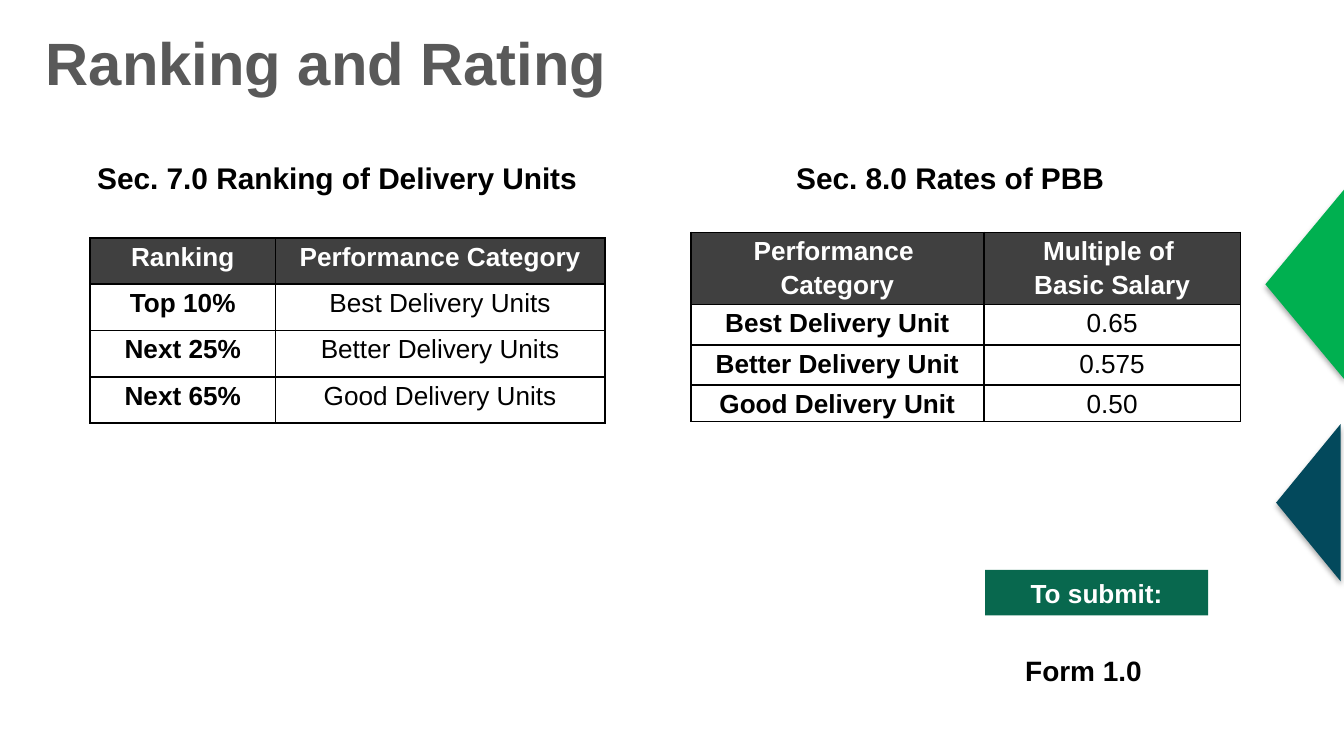
from lxml.etree import SubElement
from pptx import Presentation
from pptx.dml.color import RGBColor
from pptx.enum.shapes import MSO_SHAPE
from pptx.enum.text import MSO_ANCHOR, PP_ALIGN
from pptx.oxml import parse_xml
from pptx.oxml.ns import nsdecls, qn
from pptx.util import Inches, Pt

THEME = {
    "font": "Arial",
    "black": "000000", "white": "FFFFFF", "gray": "595959", "head": "404040",
    "green": "00B050", "navy": "03495C", "label": "08684E",
    "title": 32, "section": 16, "form": 15, "cell": 14,
}

TITLE = "Ranking and Rating"
SECTIONS = [
    {
        "name": "Sec. 7.0 Ranking of Delivery Units", "name_at": (0.26, 1.14),
        "at": (0.67, 1.77), "cols": [1.38, 2.45], "heights": [1.38 / 4] * 4,
        "rows": [
            (["Ranking"], ["Performance Category"]),
            (["Top 10%"], ["Best Delivery Units"]),
            (["Next 25%"], ["Better Delivery Units"]),
            (["Next 65%"], ["Good Delivery Units"]),
        ],
    },
    {
        "name": "Sec. 8.0 Rates of PBB", "name_at": (4.82, 1.14),
        "at": (5.14, 1.73), "cols": [2.18, 1.91], "heights": [0.53, 0.3, 0.3, 0.27],
        "rows": [
            (["Performance ", "Category"], ["Multiple of ", "Basic Salary"]),
            (["Best Delivery Unit"], ["0.65"]),
            (["Better Delivery Unit"], ["0.575"]),
            (["Good Delivery Unit"], ["0.50"]),
        ],
    },
]
ARROWS = [("green", 9, 1.82, 1.42, 0.59), ("navy", 9.15, 3.5, 1.17, 0.48)]
SUBMIT = ("To submit:", 7.33, 4.24, 1.66, 0.34)
FORM = ("Form 1.0", 7.53, 4.81, 1.8, 0.35)


def color(name):
    return RGBColor.from_string(THEME[name])


def write(frame, lines, size, ink, bold=True, align=PP_ALIGN.CENTER, space=None):
    frame.word_wrap = True
    for i, line in enumerate(lines):
        para = frame.add_paragraph() if i else frame.paragraphs[0]
        para.alignment = align
        para.line_spacing = space
        run = para.add_run()
        run.text = line
        font = run.font
        font.name, font.size, font.bold = THEME["font"], Pt(THEME[size]), bold
        font.color.rgb = color(ink)


def add_text(slide, text, box, size, align):
    frame = slide.shapes.add_textbox(*map(Inches, box)).text_frame
    write(frame, [text], size, "black", align=align)


def add_block(slide, kind, box, fill):
    shape = slide.shapes.add_shape(kind, *map(Inches, box))
    shape.shadow.inherit = False
    shape.fill.solid()
    shape.fill.fore_color.rgb = color(fill)
    shape.line.fill.background()
    return shape


def add_shadow(shape):
    effects = shape._element.spPr.find(qn("a:effectLst"))
    effects.append(parse_xml(
        f'<a:outerShdw {nsdecls("a")} blurRad="{Pt(3.1)}" dist="{Pt(1.8)}" '
        'dir="5400000" rotWithShape="0"><a:srgbClr val="000000">'
        '<a:alpha val="35000"/></a:srgbClr></a:outerShdw>'))


def add_border(cell):
    props = cell._tc.get_or_add_tcPr()
    for i, side in enumerate(("lnL", "lnR", "lnT", "lnB")):
        line = parse_xml(f'<a:{side} {nsdecls("a")} w="{Pt(1)}"/>')
        fill = SubElement(line, qn("a:solidFill"))
        SubElement(fill, qn("a:srgbClr"), val=THEME["black"])
        props.insert(i, line)


def add_grid(slide, part):
    cols, heights = part["cols"], part["heights"]
    box = (*part["at"], sum(cols), sum(heights))
    table = slide.shapes.add_table(
        len(heights), len(cols), *map(Inches, box)).table
    table.first_row = table.horz_banding = False
    for col, width in zip(table.columns, cols):
        col.width = Inches(width)
    for r, row in enumerate(part["rows"]):
        table.rows[r].height = Inches(heights[r])
        for c, lines in enumerate(row):
            cell = table.cell(r, c)
            cell.margin_left = cell.margin_right = Inches(0.07)
            cell.margin_top = cell.margin_bottom = 0
            head = r == 0
            if head:
                cell.fill.solid()
                cell.fill.fore_color.rgb = color("head")
            else:
                cell.fill.background()
            add_border(cell)
            write(cell.text_frame, lines, "cell", "white" if head else "black",
                  bold=head or c == 0, space=1.15)


def main():
    deck = Presentation()
    deck.slide_width = Inches(10)
    deck.slide_height = deck.slide_width * 9 // 16
    slide = deck.slides.add_slide(deck.slide_layouts[5])

    title = slide.shapes.title
    title.left, title.top = Inches(0.24), Inches(0.14)
    title.width, title.height = Inches(4.5), Inches(0.64)
    title.text_frame.vertical_anchor = MSO_ANCHOR.TOP
    write(title.text_frame, [TITLE], "title", "gray", align=PP_ALIGN.LEFT)

    for part in SECTIONS:
        add_text(slide, part["name"], (*part["name_at"], 4.5, 0.37),
                 "section", PP_ALIGN.CENTER)
        add_grid(slide, part)

    for fill, *box in ARROWS:
        arrow = add_block(slide, MSO_SHAPE.ISOSCELES_TRIANGLE, box, fill)
        arrow.rotation = 270
        add_shadow(arrow)

    text, *box = SUBMIT
    label = add_block(slide, MSO_SHAPE.RECTANGLE, box, "label")
    write(label.text_frame, [text], "cell", "white")
    text, *box = FORM
    add_text(slide, text, box, "form", PP_ALIGN.LEFT)

    deck.save("out.pptx")


if __name__ == "__main__":
    main()
